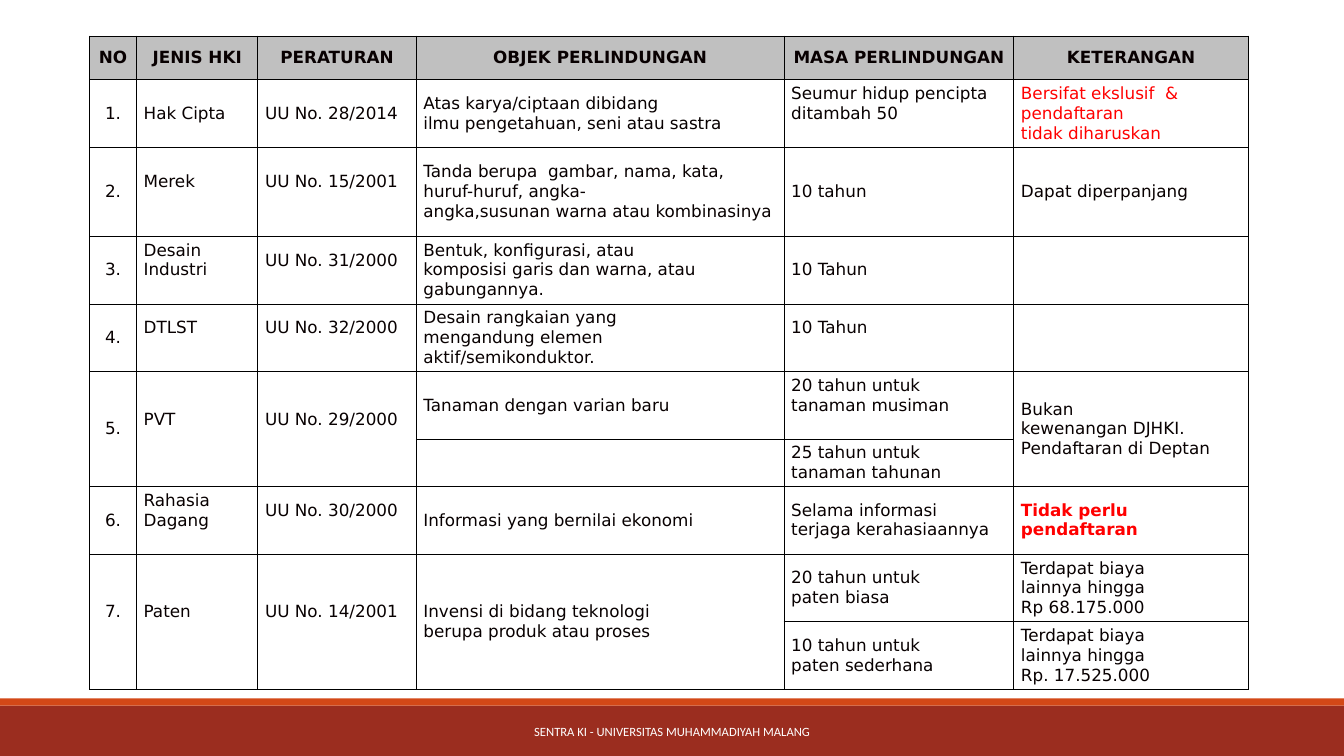
from dataclasses import dataclass

from pptx import Presentation
from pptx.dml.color import RGBColor
from pptx.enum.shapes import MSO_SHAPE
from pptx.enum.text import MSO_ANCHOR, PP_ALIGN
from pptx.oxml.xmlchemy import OxmlElement
from pptx.util import Cm, Pt

RECTANGLE = MSO_SHAPE.RECTANGLE
MIDDLE = MSO_ANCHOR.MIDDLE
LEFT, CENTER = PP_ALIGN.LEFT, PP_ALIGN.CENTER

COLORS = {
    "ink": "080001",
    "alert": "FF0000",
    "header": "C0C0C0",
    "border": "000000",
    "footer": "9B2D1F",
    "accent": "D34817",
    "white": "FFFFFF",
}
TABLE_FONT, FOOTER_FONT = "DejaVu Sans", "Calibri"
NO_BREAK_SPACE = chr(160)
SIDE_MARGIN, END_MARGIN, TEXT_LINE = Cm(0.18), Cm(0.09), Cm(0.5)
SLIDE_WIDTH, SLIDE_HEIGHT = Cm(33.87), Cm(19.05)
COLUMN_WIDTHS = [1.18, 3.06, 3.99, 9.27, 5.79, 5.91]
ROW_HEIGHTS = [1.1, 1.7, 2.24, 1.7, 1.7, 1.7, 1.19, 1.7, 1.7, 1.7]


@dataclass
class Entry:
    """A cell's text, where | marks a place the line may wrap."""
    text: str
    raised: bool = False
    bold: bool = False
    color: str = "ink"
    fill: str = ""


@dataclass
class Bar:
    top: float
    height: float
    color: str


def up(text: str) -> Entry:
    """An entry that sits half a line above the middle of its cell."""
    return Entry(text, raised=True)


HEADINGS = ["NO", "JENIS HKI", "PERATURAN", "OBJEK PERLINDUNGAN",
            "MASA PERLINDUNGAN", "KETERANGAN"]
ROWS = [
    [Entry(heading, bold=True, fill="header") for heading in HEADINGS],
    [Entry("1."), Entry("Hak Cipta"), Entry("UU No. 28/2014"),
     Entry("Atas karya/ciptaan dibidang|ilmu pengetahuan, seni atau sastra"),
     up("Seumur hidup|pencipta|ditambah 50"),
     Entry("Bersifat ekslusif  &|pendaftaran|tidak diharuskan", color="alert")],
    [Entry("2."), up("Merek"), up("UU No. 15/2001"),
     Entry("Tanda berupa  gambar, nama, kata,|huruf-huruf, angka-|"
           "angka,susunan warna atau kombinasinya"),
     Entry("10 tahun"), Entry("Dapat|diperpanjang")],
    [Entry("3."), up("Desain\nIndustri"), up("UU No. 31/2000"),
     Entry("Bentuk, konfigurasi, atau|komposisi garis dan warna,|atau|gabungannya."),
     Entry("10 Tahun"), None],
    [Entry("4."), up("DTLST"), up("UU No. 32/2000"),
     Entry("Desain rangkaian yang|mengandung elemen|aktif/semikonduktor."),
     up("10 Tahun"), None],
    [Entry("5."), up("PVT"), up("UU No. 29/2000"),
     Entry("Tanaman dengan varian baru"),
     up("20 tahun untuk|tanaman musiman"),
     Entry("Bukan|kewenangan DJHKI.|Pendaftaran di|Deptan")],
    [None, None, None, None, Entry("25 tahun untuk|tanaman tahunan"), None],
    [Entry("6."), up("Rahasia|Dagang"), up("UU No. 30/2000"),
     Entry("Informasi yang bernilai|ekonomi"),
     Entry("Selama informasi|terjaga kerahasiaannya"),
     Entry("Tidak perlu|pendaftaran", bold=True, color="alert")],
    [up("7."), up("Paten"), up("UU No. 14/2001"),
     Entry("Invensi di bidang teknologi|berupa produk atau proses"),
     Entry("20 tahun untuk|paten biasa"),
     Entry("Terdapat biaya|lainnya hingga|Rp 68.175.000")],
    [None, None, None, None, Entry("10 tahun untuk|paten sederhana"),
     Entry("Terdapat biaya|lainnya hingga|Rp. 17.525.000")],
]
# First row of each two-row entry, with the columns it joins
TWO_ROW_COLUMNS = {5: [0, 1, 2, 5], 8: [0, 1, 2, 3]}
FOOTER_BARS = [Bar(17.78, 1.27, "footer"), Bar(17.6, 0.18, "accent")]


def rgb(name: str) -> RGBColor:
    return RGBColor.from_string(COLORS[name])


def format_text(frame, font: str, size: float, color: str, align, bold=False) -> None:
    for paragraph in frame.paragraphs:
        paragraph.alignment = align
        for run in paragraph.runs:
            run.font.name = font
            run.font.size = Pt(size)
            run.font.bold = bold
            run.font.color.rgb = rgb(color)


def add_borders(cell) -> None:
    properties = cell._tc.get_or_add_tcPr()
    for side in ("a:lnL", "a:lnR", "a:lnT", "a:lnB"):
        line = OxmlElement(side)
        line.set("w", str(Pt(0.75)))
        solid = OxmlElement("a:solidFill")
        color = OxmlElement("a:srgbClr")
        color.set("val", COLORS["border"])
        solid.append(color)
        line.append(solid)
        properties.append(line)


def fill_cell(cell, entry: Entry, align) -> None:
    cell.text_frame.text = entry.text.replace(" ", NO_BREAK_SPACE).replace("|", " ")
    format_text(cell.text_frame, TABLE_FONT, 12, entry.color, align, entry.bold)
    if entry.raised:
        cell.margin_bottom = END_MARGIN + TEXT_LINE
    if entry.fill:
        cell.fill.solid()
        cell.fill.fore_color.rgb = rgb(entry.fill)


def add_rights_table(slide) -> None:
    table = slide.shapes.add_table(
        len(ROWS), len(HEADINGS), Cm(2.26), Cm(0.91),
        Cm(sum(COLUMN_WIDTHS)), Cm(sum(ROW_HEIGHTS))).table
    table.first_row = table.horz_banding = False
    for column, width in zip(table.columns, COLUMN_WIDTHS):
        column.width = Cm(width)
    for row, height in zip(table.rows, ROW_HEIGHTS):
        row.height = Cm(height)
    for top, columns in TWO_ROW_COLUMNS.items():
        for left in columns:
            table.cell(top, left).merge(table.cell(top + 1, left))
    for top, entries in enumerate(ROWS):
        for left, entry in enumerate(entries):
            cell = table.cell(top, left)
            cell.vertical_anchor = MIDDLE
            cell.margin_left = cell.margin_right = SIDE_MARGIN
            cell.margin_top = cell.margin_bottom = END_MARGIN
            add_borders(cell)
            cell.fill.background()
            if entry:
                fill_cell(cell, entry, CENTER if top == 0 or left == 0 else LEFT)


def add_footer(slide) -> None:
    for bar in FOOTER_BARS:
        band = slide.shapes.add_shape(
            RECTANGLE, 0, Cm(bar.top), SLIDE_WIDTH, Cm(bar.height))
        band.shadow.inherit = False
        band.fill.solid()
        band.fill.fore_color.rgb = rgb(bar.color)
        band.line.fill.background()
    organiser = slide.shapes.add_textbox(
        Cm(10.24), Cm(17.93), Cm(13.39), Cm(1.02)).text_frame
    organiser.word_wrap = True
    organiser.vertical_anchor = MIDDLE
    organiser.text = "SENTRA KI - UNIVERSITAS MUHAMMADIYAH MALANG"
    format_text(organiser, FOOTER_FONT, 9, "white", CENTER)


def main() -> None:
    presentation = Presentation()
    presentation.slide_width = SLIDE_WIDTH
    presentation.slide_height = SLIDE_HEIGHT
    slide = presentation.slides.add_slide(presentation.slide_layouts[6])
    add_footer(slide)
    add_rights_table(slide)
    presentation.save("out.pptx")


if __name__ == "__main__":
    main()
